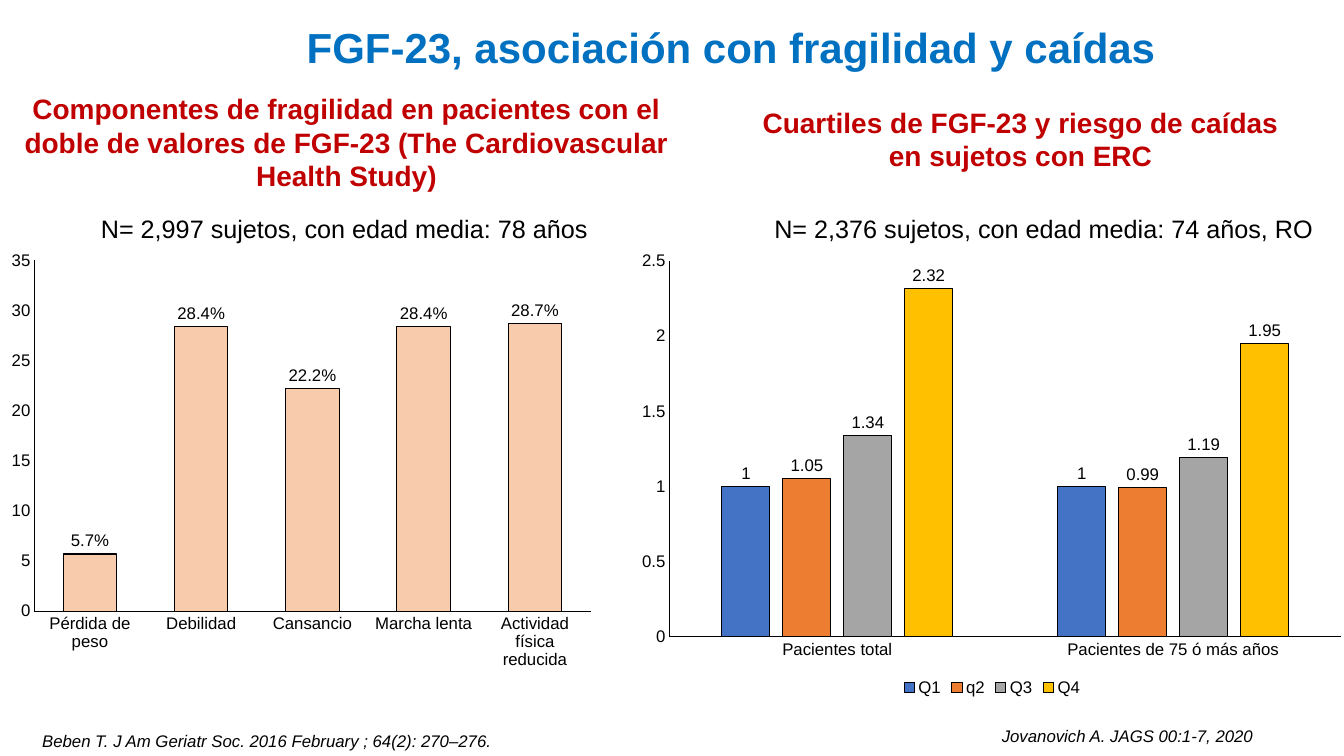
"""Build the slide on FGF-23 and its association with frailty and falls."""
from lxml.etree import SubElement, fromstring
from pptx import Presentation
from pptx.chart.data import CategoryChartData
from pptx.dml.color import RGBColor
from pptx.enum.chart import XL_CHART_TYPE, XL_LABEL_POSITION, XL_LEGEND_POSITION, XL_TICK_MARK
from pptx.enum.text import MSO_AUTO_SIZE, PP_ALIGN
from pptx.oxml.ns import qn
from pptx.util import Pt

COLORS = {
    "title": "0070C0", "heading": "C00000", "text": "000000", "components": "F8CBAD",
    "Q1": "4472C4", "q2": "ED7D31", "Q3": "A5A5A5", "Q4": "FFC000",
}


def style_font(font, size, color="text", bold=False, italic=False):
    font.name = "Arial"
    font.size = Pt(size)
    font.bold = bold
    font.italic = italic
    font.color.rgb = RGBColor.from_string(COLORS[color])


def style_line(line):
    line.color.rgb = RGBColor.from_string(COLORS["text"])
    line.width = Pt(0.75)


prs = Presentation()
prs.slide_width, prs.slide_height = Pt(960), Pt(540)
slide = prs.slides.add_slide(prs.slide_layouts[6])

charts = [
    {
        "place": (0, 173.5, 430.5, 311), "plot": (0.057, 0.04, 0.923, 0.806),
        "categories": ["Pérdida de peso", "Debilidad", "Cansancio", "Marcha lenta",
                       "Actividad física reducida"],
        "series": {"Series 1": ("components", [5.7, 28.4, 22.2, 28.4, 28.7])},
        "gap": 108, "top": 35, "step": 5, "labels": '0.0"%"', "legend": False,
    },
    {
        "place": (448.5, 173.5, 520.5, 327), "plot": (0.057, 0.04, 0.922, 0.82),
        "categories": ["Pacientes total", "Pacientes de 75 ó más años"],
        "series": {"Q1": ("Q1", [1, 1]), "q2": ("q2", [1.05, 0.99]),
                   "Q3": ("Q3", [1.34, 1.19]), "Q4": ("Q4", [2.32, 1.95])},
        "gap": 219, "top": 2.5, "step": 0.5, "labels": "General", "legend": True,
    },
]

for study in charts:
    data = CategoryChartData()
    data.categories = study["categories"]
    for name, (color, values) in study["series"].items():
        data.add_series(name, values)
    chart = slide.shapes.add_chart(
        XL_CHART_TYPE.COLUMN_CLUSTERED, *map(Pt, study["place"]), data).chart
    style_font(chart.font, 10)
    chart.has_title = False
    chart.has_legend = study["legend"]
    if study["legend"]:
        chart.legend.position = XL_LEGEND_POSITION.BOTTOM
        chart.legend.include_in_layout = False
        style_font(chart.legend.font, 12)

    bars = chart.plots[0]
    bars.vary_by_categories = False
    bars.gap_width, bars.overlap = study["gap"], -27
    for series in bars.series:
        series.format.fill.solid()
        color = study["series"][series.name][0]
        series.format.fill.fore_color.rgb = RGBColor.from_string(COLORS[color])
        style_line(series.format.line)
        labels = series.data_labels
        labels.show_value = True
        labels.position = XL_LABEL_POSITION.OUTSIDE_END
        labels.number_format = study["labels"]
        labels.number_format_is_linked = False
        style_font(labels.font, 12)

    for axis in (chart.category_axis, chart.value_axis):
        axis.major_tick_mark = axis.minor_tick_mark = XL_TICK_MARK.NONE
        axis.has_major_gridlines = False
        style_font(axis.tick_labels.font, 12)
        style_line(axis.format.line)
    scale = chart.value_axis
    scale.minimum_scale, scale.maximum_scale = 0, study["top"]
    scale.major_unit = study["step"]

    plot_area = chart.element.find(".//" + qn("c:plotArea"))
    for automatic in plot_area.findall(qn("c:layout")):
        plot_area.remove(automatic)
    layout = fromstring(
        '<c:layout xmlns:c="http://schemas.openxmlformats.org/drawingml/2006/chart"/>')
    manual = SubElement(layout, qn("c:manualLayout"))
    settings = [("layoutTarget", "inner"), ("xMode", "edge"), ("yMode", "edge")]
    for tag, value in settings + list(zip("xywh", study["plot"])):
        SubElement(manual, qn("c:" + tag)).set("val", str(value))
    plot_area.insert(0, layout)

heading = {"size": 20, "color": "heading", "bold": True}
sample = {"size": 18}
citation = {"size": 12, "italic": True}
texts = [
    ("FGF-23, asociación con fragilidad y caídas", (183, 12, 679, 44), True,
     {"size": 30, "color": "title", "bold": True}),
    ("Componentes de fragilidad en pacientes con el doble de valores de FGF-23 "
     "(The Cardiovascular Health Study)", (-0.5, 62, 496, 80), True, heading),
    ("Cuartiles de FGF-23 y riesgo de caídas en sujetos con ERC",
     (533.5, 71.5, 391, 55.5), True, heading),
    ("N= 2,997 sujetos, con edad media: 78 años", (65, 148.5, 366, 29), False, sample),
    ("N= 2,376 sujetos, con edad media: 74 años, RO", (546, 148.5, 402.5, 29), False, sample),
    ("Beben T. J Am Geriatr Soc. 2016 February ; 64(2): 270–276.",
     (23, 518.5, 358, 21.5), False, citation),
    ("Jovanovich A. JAGS 00:1-7, 2020", (708.5, 515, 195, 21.5), False, citation),
]
for wording, place, centered, style in texts:
    frame = slide.shapes.add_textbox(*map(Pt, place)).text_frame
    frame.word_wrap = centered
    frame.auto_size = MSO_AUTO_SIZE.SHAPE_TO_FIT_TEXT
    paragraph = frame.paragraphs[0]
    paragraph.alignment = PP_ALIGN.CENTER if centered else PP_ALIGN.LEFT
    run = paragraph.add_run()
    run.text = wording
    style_font(run.font, **style)

prs.save("out.pptx")
